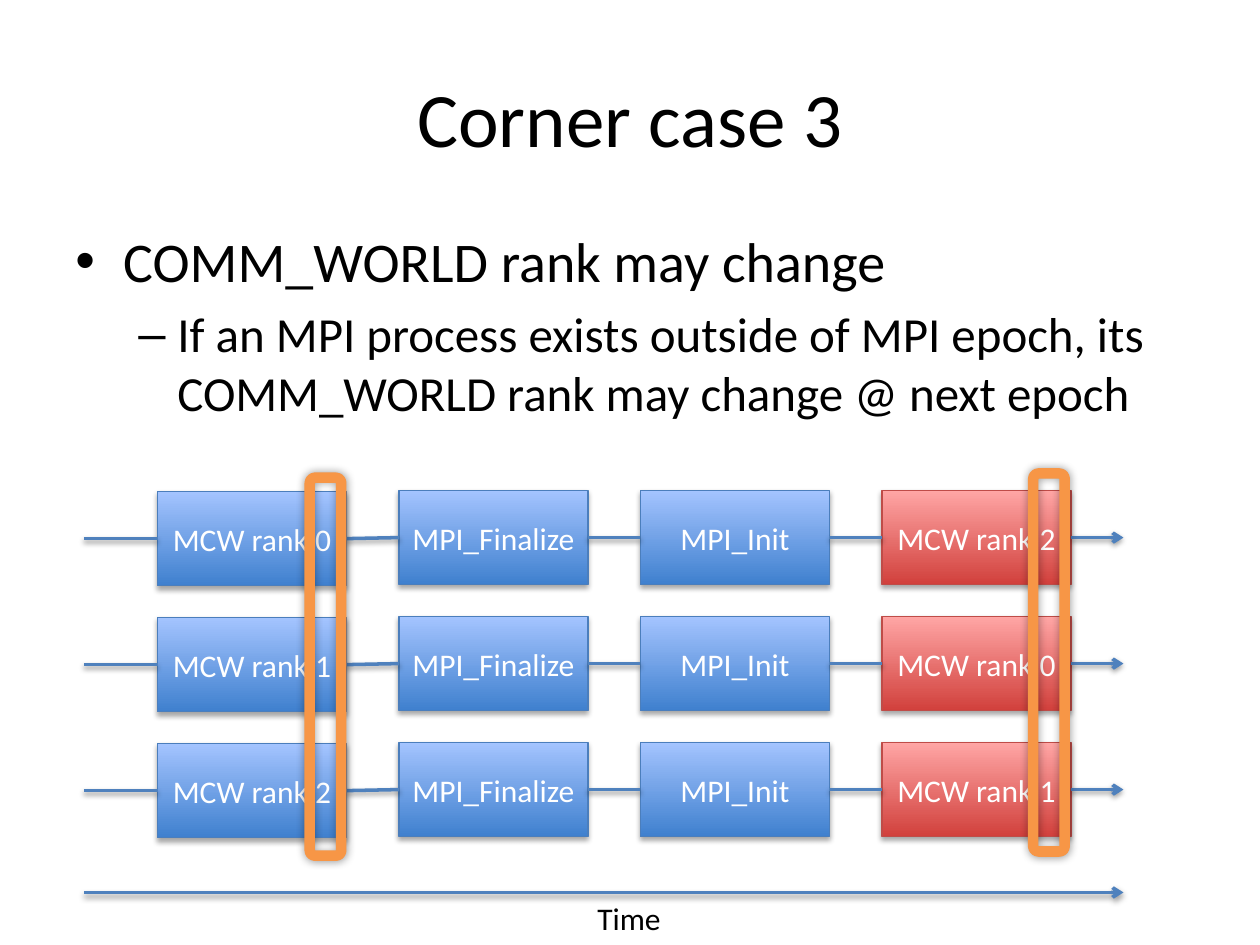
from pptx import Presentation, util as u
from pptx.dml.color import RGBColor
from pptx.enum import shapes, text
from pptx.oxml import parse_xml
from pptx.oxml.ns import nsdecls

BLACK = RGBColor(0x00, 0x00, 0x00)
WHITE = RGBColor(0xFF, 0xFF, 0xFF)
WIRE = RGBColor(0x4F, 0x81, 0xBD)
AMBER = RGBColor(0xF7, 0x96, 0x46)
BLUE = (RGBColor(0x3F, 0x80, 0xCE), RGBColor(0xA4, 0xC4, 0xFF), RGBColor(0x4B, 0x7E, 0xBC))
RED = (RGBColor(0xD1, 0x40, 0x3C), RGBColor(0xFF, 0xA6, 0xA5), RGBColor(0xBF, 0x4C, 0x48))

COLS, ROWS = 120, 90
UNIT = u.Inches(10) // COLS
STEPS = [
    (BLUE, 0.1, ["MCW rank 0", "MCW rank 1", "MCW rank 2"]),
    (BLUE, 0, ["MPI_Finalize"] * 3),
    (BLUE, 0, ["MPI_Init"] * 3),
    (RED, 0, ["MCW rank 2", "MCW rank 0", "MCW rank 1"]),
]
POINTS = [
    ("COMM_WORLD rank may change", 32, "•", 0.38, 0.38),
    ("If an MPI process exists outside of MPI epoch, "
     "its COMM_WORLD rank may change @ next epoch", 28, "–", 0.81, 0.31),
]


def grid(*cells):
    return [round(cell * UNIT) for cell in cells]


def shade(item, alpha, blur, dist, turn):
    item._element.spPr.append(parse_xml(
        f'<a:effectLst {nsdecls("a")}>'
        f'<a:outerShdw blurRad="{u.Pt(blur)}" dist="{u.Pt(dist)}" dir="{turn * 60000}" rotWithShape="0">'
        f'<a:srgbClr val="000000"><a:alpha val="{alpha * 1000}"/></a:srgbClr>'
        '</a:outerShdw></a:effectLst>'))


def write(para, words, size, color=BLACK):
    run = para.add_run()
    run.text = words
    run.font.name = "Calibri"
    run.font.size = u.Pt(size)
    run.font.color.rgb = color


def label(slide, box, words, size, wrap=True, align=text.PP_ALIGN.LEFT, anchor=text.MSO_ANCHOR.TOP):
    frame = slide.shapes.add_textbox(*grid(*box)).text_frame
    frame.word_wrap = wrap
    frame.vertical_anchor = anchor
    para = frame.paragraphs[0]
    para.alignment = align
    write(para, words, size)


def bullets(slide, box):
    frame = slide.shapes.add_textbox(*grid(*box)).text_frame
    frame.word_wrap = True
    for level, (words, size, mark, left, hang) in enumerate(POINTS):
        para = frame.add_paragraph() if level else frame.paragraphs[0]
        para.level = level
        para.space_before = u.Pt(size * 0.2)
        props = para._p.get_or_add_pPr()
        props.set("marL", str(u.Inches(left)))
        props.set("indent", str(-u.Inches(hang)))
        props.append(parse_xml(f'<a:buFont {nsdecls("a")} typeface="Arial"/>'))
        props.append(parse_xml(f'<a:buChar {nsdecls("a")} char="{mark}"/>'))
        write(para, words, size)


def step(slide, box, words, tone):
    item = slide.shapes.add_shape(shapes.MSO_SHAPE.RECTANGLE, *grid(*box))
    low, high, edge = tone
    item.fill.gradient()
    item.fill.gradient_angle = 90
    for stop, color in zip(item.fill.gradient_stops, (low, high)):
        stop.color.rgb = color
    item.line.color.rgb = edge
    item.line.width = u.Pt(0.75)
    shade(item, 35, 3.1, 1.8, 90)
    frame = item.text_frame
    frame.vertical_anchor = text.MSO_ANCHOR.MIDDLE
    para = frame.paragraphs[0]
    para.alignment = text.PP_ALIGN.CENTER
    write(para, words, 18, WHITE)
    return item


def wire(slide, x1, x2, y, start=None, end=None, arrow=False):
    line = slide.shapes.add_connector(shapes.MSO_CONNECTOR.STRAIGHT, *grid(x1, y, x2, y))
    if start is not None:
        line.begin_connect(start, 3)
    if end is not None:
        line.end_connect(end, 1)
    line.line.color.rgb = WIRE
    line.line.width = u.Pt(2)
    if arrow:
        line.line._get_or_add_ln().append(parse_xml(f'<a:tailEnd {nsdecls("a")} type="arrow"/>'))
    shade(line, 38, 3.1, 1.6, 90)


def lanes(slide, box):
    left, top, width, height = box
    wide, high, first, pitch = 18, 9, 7, 23
    gap = height / 3
    for row in range(3):
        y = top + row * gap
        chain = [
            step(slide, (left + first + col * pitch, y + drop, wide, high), names[row], tone)
            for col, (tone, drop, names) in enumerate(STEPS)
        ]
        mid = y + high / 2
        for start, end in zip([None] + chain, chain + [None]):
            wire(slide, left, left + width, mid + (0.1 if start is None else 0),
                 start, end, arrow=end is None)


def ring(slide, box):
    item = slide.shapes.add_shape(shapes.MSO_SHAPE.ROUNDED_RECTANGLE, *grid(*box))
    item.fill.background()
    item.line.color.rgb = AMBER
    item.line.width = u.Pt(6)
    shade(item, 40, 5, 0, 0)


def axis(slide, box):
    left, top, width, height = box
    wire(slide, left, left + width, top, arrow=True)
    label(slide, (left + 47.7, top, 8.5, height), "Time", 18, wrap=False)


def main():
    deck = Presentation()
    deck.slide_width, deck.slide_height = grid(COLS, ROWS)
    slide = deck.slides.add_slide(deck.slide_layouts[6])
    label(slide, (6, 3.6, 108, 15), "Corner case 3", 44,
          align=text.PP_ALIGN.CENTER, anchor=text.MSO_ANCHOR.MIDDLE)
    bullets(slide, (6, 21, 108, 59.4))
    lanes(slide, (8, 46.7, 99, 36))
    ring(slide, (29.5, 45.5, 3, 36))
    ring(slide, (98.4, 45.1, 3, 36))
    axis(slide, (8, 85, 99, 4.8))
    deck.save("out.pptx")


if __name__ == "__main__":
    main()
